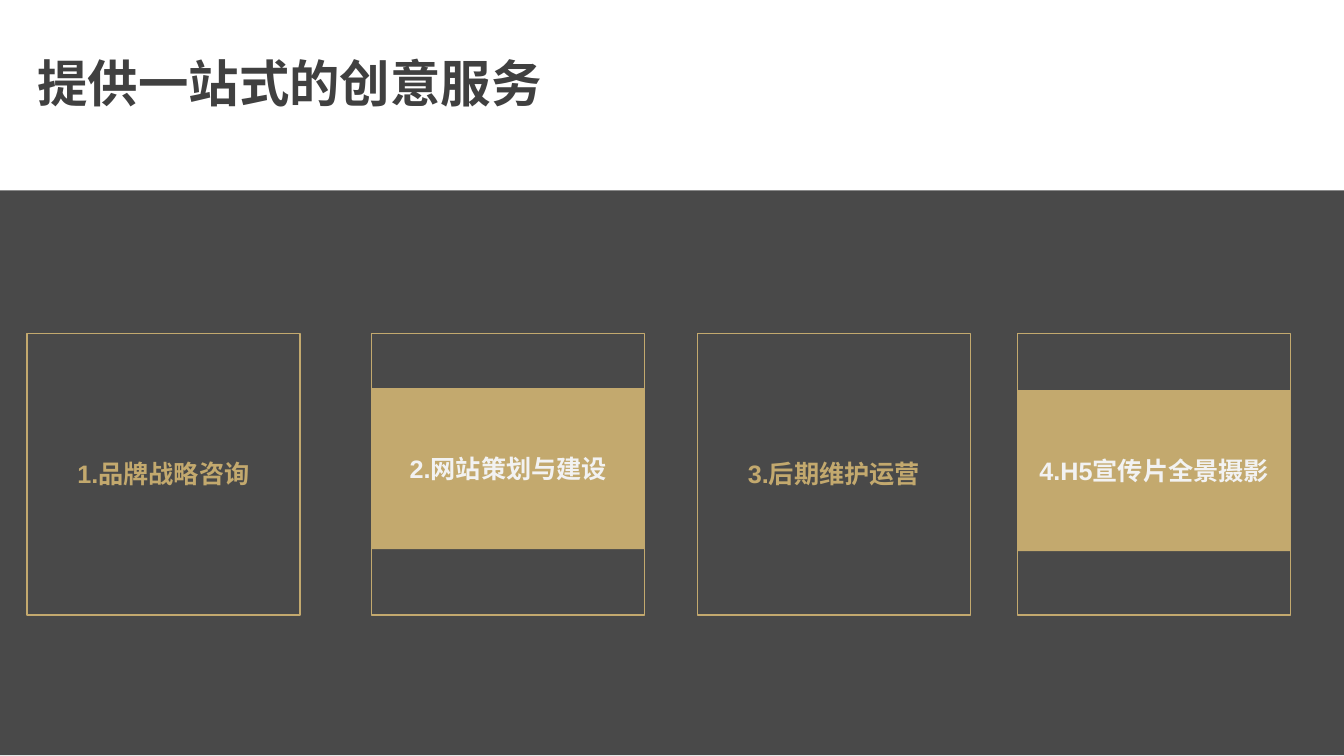
from dataclasses import dataclass

import lxml.etree
import pptx
import pptx.dml.color
import pptx.enum.shapes
import pptx.enum.text
import pptx.oxml.ns
import pptx.shapes.autoshape
import pptx.slide
import pptx.text.text
import pptx.util
from pptx.util import Cm

GOLD = pptx.dml.color.RGBColor(0xC3, 0xA9, 0x6E)
NEAR_BLACK = pptx.dml.color.RGBColor(0x0D, 0x0D, 0x0D)
DARK_GREY = pptx.dml.color.RGBColor(0x40, 0x40, 0x40)
PALE_GREY = pptx.dml.color.RGBColor(0xF2, 0xF2, 0xF2)

LATIN_FONT = "Arial"
CHINESE_FONT = "Noto Sans CJK SC"

CARD_TOP, CARD_WIDTH, CARD_HEIGHT = Cm(8.41), Cm(6.88), Cm(7.09)
LABEL_TOP, LABEL_HEIGHT = Cm(11.38), Cm(1.09)
BAND_HEIGHT = Cm(4.06)


@dataclass
class ServiceCard:
    label: str
    left: pptx.util.Length
    band_top: pptx.util.Length | None = None  # None: label without a gold band


SERVICE_CARDS = [
    ServiceCard("1.品牌战略咨询", Cm(0.68)),
    ServiceCard("2.网站策划与建设", Cm(9.37), Cm(9.78)),
    ServiceCard("3.后期维护运营", Cm(17.58)),
    ServiceCard("4.H5宣传片全景摄影", Cm(25.65), Cm(9.83)),
]


def format_paragraph(paragraph: pptx.text.text._Paragraph, size: float, font_name: str,
                     color: pptx.dml.color.RGBColor,
                     alignment: pptx.enum.text.PP_ALIGN) -> None:
    paragraph.alignment = alignment
    font = paragraph.font
    font.size = pptx.util.Pt(size)
    font.bold = True
    font.color.rgb = color
    font.name = font_name
    # East Asian typeface
    properties = paragraph._p.pPr.find(pptx.oxml.ns.qn("a:defRPr"))
    east_asian = lxml.etree.SubElement(properties, pptx.oxml.ns.qn("a:ea"))
    east_asian.set("typeface", CHINESE_FONT)


def add_rectangle(slide: pptx.slide.Slide, left: int, top: int, width: int, height: int,
                  fill: pptx.dml.color.RGBColor | None = None,
                  line: pptx.dml.color.RGBColor | None = None
                  ) -> pptx.shapes.autoshape.Shape:
    shape = slide.shapes.add_shape(
        pptx.enum.shapes.MSO_SHAPE.RECTANGLE, left, top, width, height)
    shape.shadow.inherit = False
    if fill is None:
        shape.fill.background()
    else:
        shape.fill.solid()
        shape.fill.fore_color.rgb = fill
    if line is None:
        shape.line.fill.background()
    else:
        shape.line.color.rgb = line
        shape.line.width = pptx.util.Pt(1)
    return shape


def add_title(slide: pptx.slide.Slide, text: str) -> None:
    title = slide.shapes.title
    title.left, title.top, title.width, title.height = Cm(0.69), Cm(1.19), Cm(17.45), Cm(1.8)
    frame = title.text_frame
    frame.text = text
    frame.vertical_anchor = pptx.enum.text.MSO_ANCHOR.TOP
    frame.auto_size = pptx.enum.text.MSO_AUTO_SIZE.NONE
    format_paragraph(frame.paragraphs[0], 36, CHINESE_FONT, DARK_GREY,
                     pptx.enum.text.PP_ALIGN.LEFT)


def add_backdrop(slide: pptx.slide.Slide) -> None:
    backdrop = add_rectangle(slide, Cm(-0.05), Cm(4.8), Cm(33.95), Cm(14.23), NEAR_BLACK)
    color = backdrop.fill._xPr.find(".//" + pptx.oxml.ns.qn("a:srgbClr"))
    lxml.etree.SubElement(color, pptx.oxml.ns.qn("a:alpha")).set("val", "75000")


def add_service_card(slide: pptx.slide.Slide, card: ServiceCard) -> None:
    if card.band_top is None:
        holder = slide.shapes.add_textbox(card.left, LABEL_TOP, CARD_WIDTH, LABEL_HEIGHT)
        color = GOLD
    else:
        holder = add_rectangle(slide, card.left, card.band_top, CARD_WIDTH, BAND_HEIGHT, GOLD)
        color = PALE_GREY
    frame = holder.text_frame
    frame.text = card.label
    frame.word_wrap = False
    frame.vertical_anchor = pptx.enum.text.MSO_ANCHOR.MIDDLE
    format_paragraph(frame.paragraphs[0], 18, LATIN_FONT, color,
                     pptx.enum.text.PP_ALIGN.CENTER)
    add_rectangle(slide, card.left, CARD_TOP, CARD_WIDTH, CARD_HEIGHT, line=GOLD)


def main() -> None:
    presentation = pptx.Presentation()
    presentation.slide_width, presentation.slide_height = Cm(33.87), Cm(19.05)
    title_only_layout = presentation.slide_layouts[5]
    slide = presentation.slides.add_slide(title_only_layout)

    # Heading and dark lower area
    add_title(slide, "提供一站式的创意服务")
    add_backdrop(slide)

    # Row of services
    for card in SERVICE_CARDS:
        add_service_card(slide, card)

    presentation.save("out.pptx")


if __name__ == "__main__":
    main()
